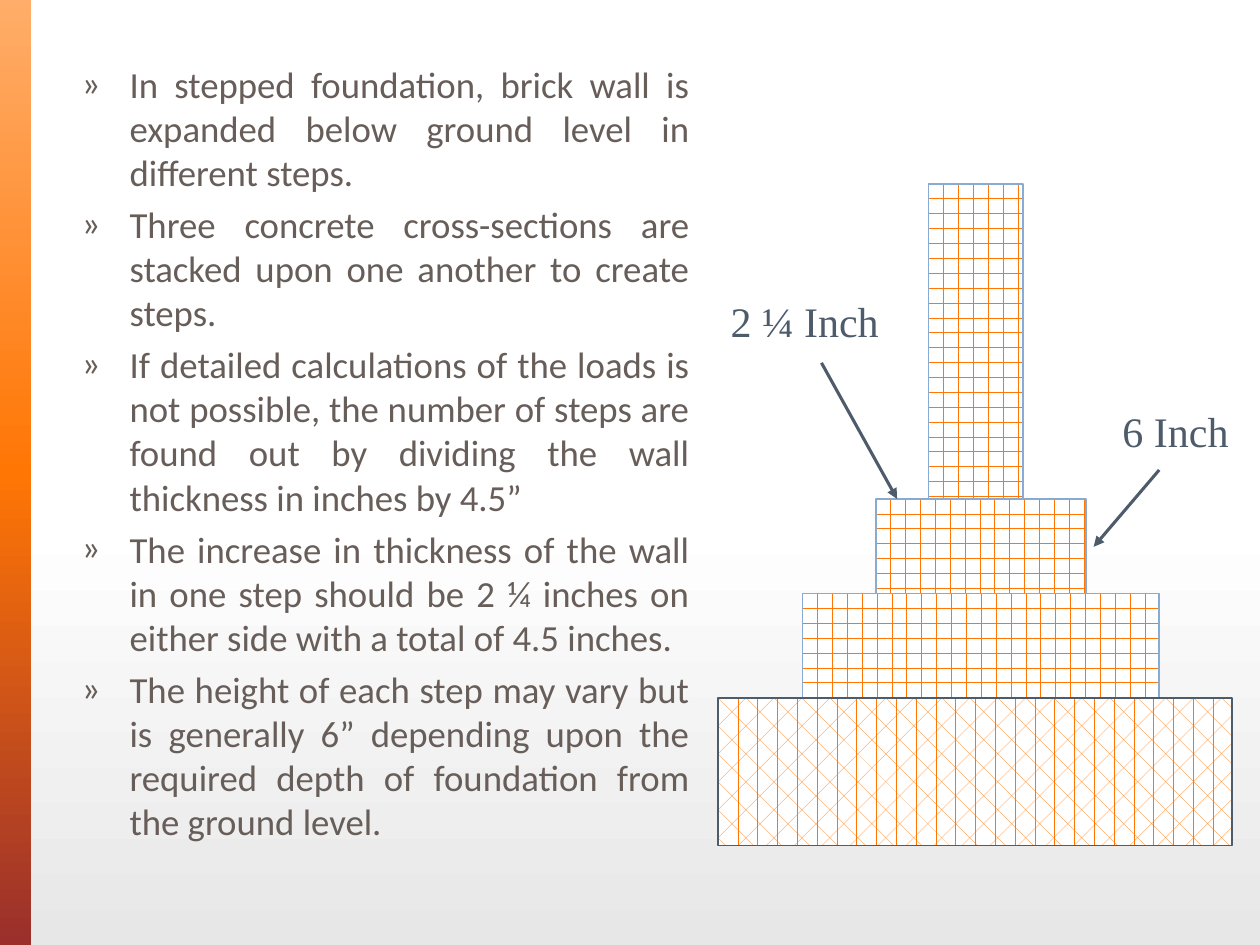
from copy import deepcopy
from lxml.etree import SubElement
from pptx import Presentation
from pptx.dml.color import RGBColor
from pptx.enum.dml import MSO_PATTERN
from pptx.enum.shapes import MSO_CONNECTOR, MSO_SHAPE
from pptx.enum.text import PP_ALIGN
from pptx.oxml.ns import qn
from pptx.util import Inches, Pt

WHITE = RGBColor(0xFF, 0xFF, 0xFF)
SILVER = RGBColor(0xE7, 0xE7, 0xE7)
PEACH = RGBColor(0xFF, 0xAD, 0x69)
ORANGE = RGBColor(0xFF, 0x76, 0x05)
RUST = RGBColor(0x9A, 0x2F, 0x2C)
BLUE = RGBColor(0x89, 0xAA, 0xD3)
SLATE = RGBColor(0x4D, 0x5B, 0x6B)
BROWN = RGBColor(0x67, 0x5D, 0x59)

POINTS = [
    "In stepped foundation, brick wall is expanded below ground level in different steps.",
    "Three concrete cross-sections are stacked upon one another to create steps.",
    "If detailed calculations of the loads is not possible, the number of steps are "
    "found out by dividing the wall thickness in inches by 4.5”",
    "The increase in thickness of the wall in one step should be 2 ¼ inches on "
    "either side with a total of 4.5 inches.",
    "The height of each step may vary but is generally 6” depending upon the "
    "required depth of foundation from the ground level.",
]

BRICK = MSO_PATTERN.HORIZONTAL_BRICK
COURSES = [
    (7.37, 0.75, 2.5, BRICK, BLUE),
    (6.95, 1.67, 0.75, BRICK, BLUE),
    (6.37, 2.83, 0.83, BRICK, BLUE),
    (5.7, 4.08, 1.17, MSO_PATTERN.DIVOT, SLATE),
]


def shade(fill, root, stops):
    fill.gradient()
    fill.gradient_angle = 270
    first = next(root.iter(qn("a:gs")))
    first.addnext(deepcopy(first))
    for stop, (place, color) in zip(fill.gradient_stops, stops):
        stop.position = place
        stop.color.rgb = color


def add_rect(slide, left, top, width, height):
    rect = slide.shapes.add_shape(
        MSO_SHAPE.RECTANGLE, Inches(left), Inches(top), Inches(width), Inches(height))
    rect.shadow.inherit = False
    return rect


def add_bar(slide):
    bar = add_rect(slide, 0, 0, 0.25, 7.5)
    bar.line.fill.background()
    shade(bar.fill, bar.element, [(0, PEACH), (0.5, ORANGE), (1, RUST)])


def add_wall(slide):
    top = 1.46
    for left, width, height, pattern, edge in COURSES:
        course = add_rect(slide, left, top, width, height)
        course.fill.patterned()
        course.fill.pattern = pattern
        course.fill.fore_color.rgb = ORANGE
        course.fill.back_color.rgb = WHITE
        course.line.color.rgb = edge
        course.line.width = Pt(1)
        top += height


def add_frame(slide, left, top, width, height):
    box = slide.shapes.add_textbox(
        Inches(left), Inches(top), Inches(width), Inches(height))
    box.text_frame.word_wrap = True
    return box.text_frame


def set_font(para, name, size, color):
    para.font.name = name
    para.font.size = Pt(size)
    para.font.color.rgb = color


def add_label(slide, text, left, top, width):
    para = add_frame(slide, left, top, width, 0.5).paragraphs[0]
    para.text = text
    set_font(para, "Times New Roman", 24, SLATE)


def add_list(slide):
    frame = add_frame(slide, 0.55, 0.44, 5.02, 6.45)
    for index, text in enumerate(POINTS):
        para = frame.add_paragraph() if index else frame.paragraphs[0]
        para.text = text
        para.alignment = PP_ALIGN.JUSTIFY
        if index:
            para.space_before = Pt(4.5)
        props = para._p.get_or_add_pPr()
        props.set("marL", str(Inches(0.38)))
        props.set("indent", str(-Inches(0.38)))
        SubElement(props, qn("a:buFont"), typeface="Calibri")
        SubElement(props, qn("a:buChar"), char="»")
        set_font(para, "Calibri", 21, BROWN)


def add_arrow(slide, start, end):
    arrow = slide.shapes.add_connector(
        MSO_CONNECTOR.STRAIGHT, *map(Inches, start + end))
    arrow.line.color.rgb = SLATE
    arrow.line.width = Pt(1.75)
    SubElement(arrow.line._get_or_add_ln(), qn("a:tailEnd"), type="triangle")
    SubElement(arrow.element.spPr, qn("a:effectLst"))


def main():
    deck = Presentation()
    deck.slide_width = Inches(10)
    deck.slide_height = Inches(7.5)
    slide = deck.slides.add_slide(deck.slide_layouts[6])
    shade(slide.background.fill, slide.element,
          [(0, WHITE), (0.55, WHITE), (1, SILVER)])
    add_bar(slide)
    add_wall(slide)
    add_arrow(slide, (6.52, 2.88), (7.12, 3.96))
    add_label(slide, "2 ¼ Inch", 5.7, 2.3, 1.67)
    add_list(slide)
    add_arrow(slide, (9.2, 3.73), (8.68, 4.34))
    add_label(slide, "6 Inch", 8.81, 3.17, 1.19)
    deck.save("out.pptx")


if __name__ == "__main__":
    main()
